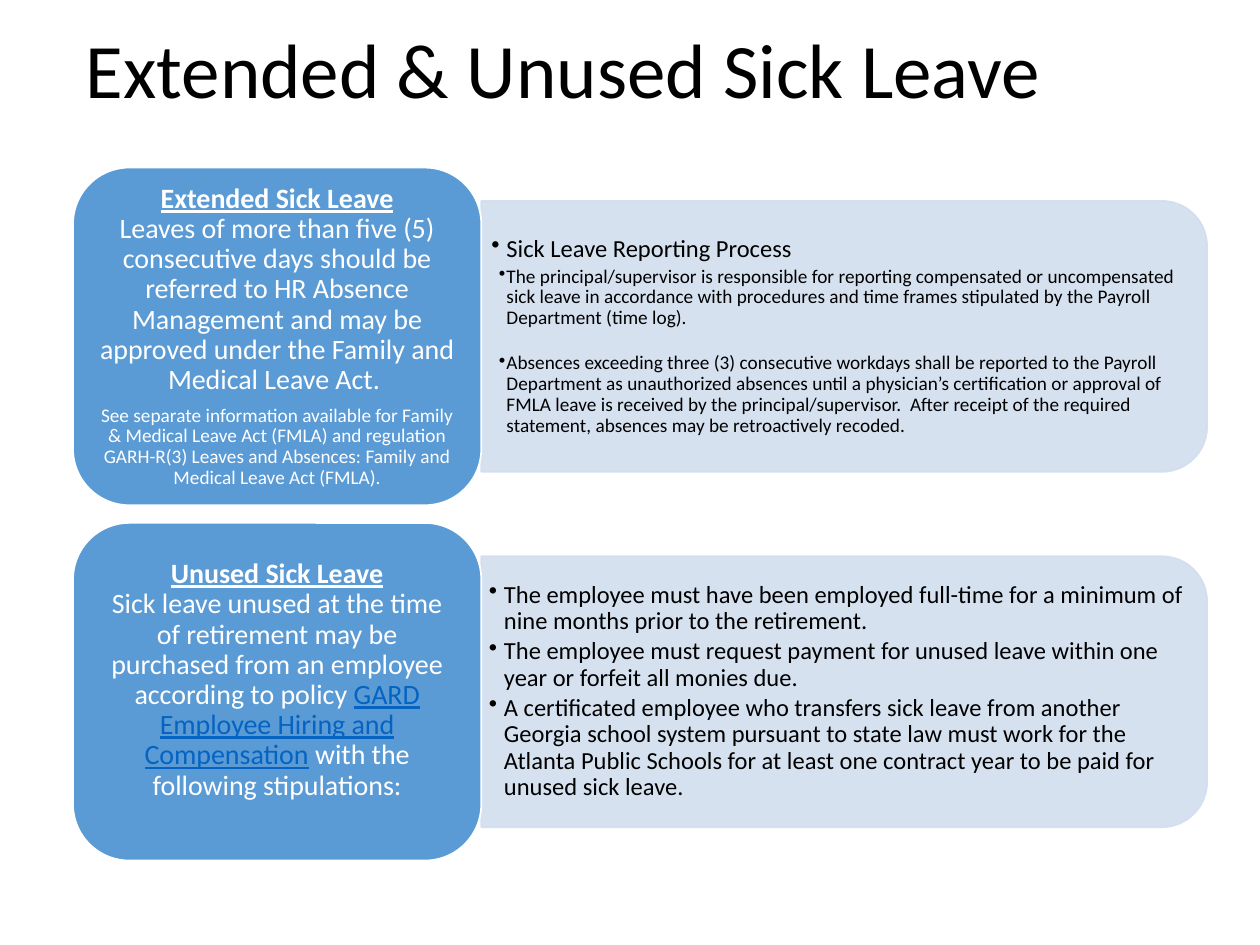
from lxml.etree import SubElement
from pptx import Presentation
from pptx.dml.color import RGBColor
from pptx.enum.shapes import MSO_SHAPE
from pptx.enum.text import MSO_ANCHOR, PP_ALIGN
from pptx.oxml.ns import qn
from pptx.util import Inches, Pt

COLORS = {"black": "000000", "white": "FFFFFF", "card": "5B9BD5",
          "panel": "D2DEEF", "link": "0563C1"}


def add_span(para, text, size, color, bold=False, underline=False):
    span = para.add_run()
    span.text = text
    span.font.name = "Calibri"
    span.font.size = Pt(size)
    span.font.bold = bold
    span.font.underline = underline
    span.font.color.rgb = RGBColor.from_string(COLORS[color])


def add_box(page, left, top, width, height, side, edge, bottom):
    frame = page.shapes.add_textbox(
        Inches(left), Inches(top), Inches(width), Inches(height)).text_frame
    frame.word_wrap = True
    frame.vertical_anchor = MSO_ANCHOR.MIDDLE
    frame.margin_left = frame.margin_right = Inches(side)
    frame.margin_top = Inches(edge)
    frame.margin_bottom = Inches(bottom)
    return frame


sections = [
    {
        "heading": "Extended Sick Leave",
        "body": [("Leaves of more than five (5) consecutive days should be referred to "
                  "HR Absence Management and may be approved under the Family and "
                  "Medical Leave Act. ", "white")],
        "note": "See separate information available for Family & Medical Leave Act (FMLA) "
                "and regulation GARH-R(3) Leaves and Absences: Family and Medical Leave "
                "Act (FMLA).",
        "card_bottom": 0.03,
        "insets": (0.08, 0.04),
        "bullets": [
            ("Sick Leave Reporting Process", 1, 14, 2),
            ("The principal/supervisor is responsible for reporting compensated or "
             "uncompensated sick leave in accordance with procedures and time frames "
             "stipulated by the Payroll Department (time log).", 2, 11, 14),
            ("Absences exceeding three (3) consecutive workdays shall be reported to the "
             "Payroll Department as unauthorized absences until a physician’s "
             "certification or approval of FMLA leave is received by the "
             "principal/supervisor.  After receipt of the required statement, absences "
             "may be retroactively recoded.", 2, 11, 2),
        ],
    },
    {
        "heading": "Unused Sick Leave",
        "body": [("Sick leave unused at the time of retirement may be purchased from an "
                  "employee according to policy ", "white"),
                 ("GARD Employee Hiring and Compensation", "link"),
                 (" with the following stipulations:", "white")],
        "note": None,
        "card_bottom": 0.21,
        "insets": (0.06, 0.03),
        "bullets": [
            ("The employee must have been employed full-time for a minimum of nine months "
             "prior to the retirement.", 1, 14, 2),
            ("The employee must request payment for unused leave within one year or "
             "forfeit all monies due.", 1, 14, 2),
            ("A certificated employee who transfers sick leave from another Georgia "
             "school system pursuant to state law must work for the Atlanta Public "
             "Schools for at least one contract year to be paid for unused sick leave.",
             1, 14, 2),
        ],
    },
]

deck = Presentation()
deck.slide_width, deck.slide_height = Inches(10), Inches(7.5)
page = deck.slides.add_slide(deck.slide_layouts[5])

title = page.shapes.title
title.left, title.top = Inches(0.58), Inches(0.17)
title.width, title.height = Inches(8.62), Inches(0.83)
title.text_frame.vertical_anchor = MSO_ANCHOR.MIDDLE
para = title.text_frame.paragraphs[0]
para.alignment = PP_ALIGN.LEFT
para.line_spacing = 0.9
add_span(para, "Extended & Unused Sick Leave", 44, "black")

card_left, card_width, card_height = 0.58, 3.24, 2.68
panel_left, panel_length, panel_depth = 3.82, 5.76, 2.15
first_middle, pitch = 2.67, 2.82

for row, section in enumerate(sections):
    middle = first_middle + row * pitch

    panel = page.shapes.add_shape(
        MSO_SHAPE.ROUND_2_SAME_RECTANGLE,
        Inches(panel_left + (panel_length - panel_depth) / 2),
        Inches(middle - panel_length / 2), Inches(panel_depth), Inches(panel_length))
    panel.rotation = 90
    card = page.shapes.add_shape(
        MSO_SHAPE.ROUNDED_RECTANGLE, Inches(card_left),
        Inches(middle - card_height / 2), Inches(card_width), Inches(card_height))
    for shape, fill, line in ((panel, "panel", "panel"), (card, "card", "white")):
        shape.shadow.inherit = False
        shape.fill.solid()
        shape.fill.fore_color.rgb = RGBColor.from_string(COLORS[fill])
        shape.line.color.rgb = RGBColor.from_string(COLORS[line])
        shape.line.width = Pt(1)
    for color in panel.element.spPr.iter(qn("a:srgbClr")):
        SubElement(color, qn("a:alpha"), val="90000")

    side, edge = section["insets"]
    frame = add_box(page, panel_left, middle - 0.97, 5.66, 1.94, side, edge, edge)
    for index, (text, level, size, after) in enumerate(section["bullets"]):
        para = frame.add_paragraph() if index else frame.paragraphs[0]
        para.level = level
        para.line_spacing = 0.9
        para.space_after = Pt(after)
        properties = para._p.get_or_add_pPr()
        properties.set("marL", str(Inches(0.12)))
        properties.set("indent", str(Inches(-0.12 / level)))
        SubElement(properties, qn("a:buChar"), char="•")
        add_span(para, text, size, "black")

    frame = add_box(page, card_left + 0.13, middle - 1.21, 2.98, 2.42,
                    0.07, 0.03, section["card_bottom"])
    para = frame.paragraphs[0]
    add_span(para, section["heading"], 16, "white", bold=True, underline=True)
    para.add_line_break()
    for text, color in section["body"]:
        add_span(para, text, 16, color, underline=color == "link")
    if section["note"]:
        add_span(frame.add_paragraph(), section["note"], 11, "white")
    for para in frame.paragraphs:
        para.alignment = PP_ALIGN.CENTER
        para.line_spacing = 0.9
        para.space_after = Pt(5.6)

deck.save("out.pptx")
